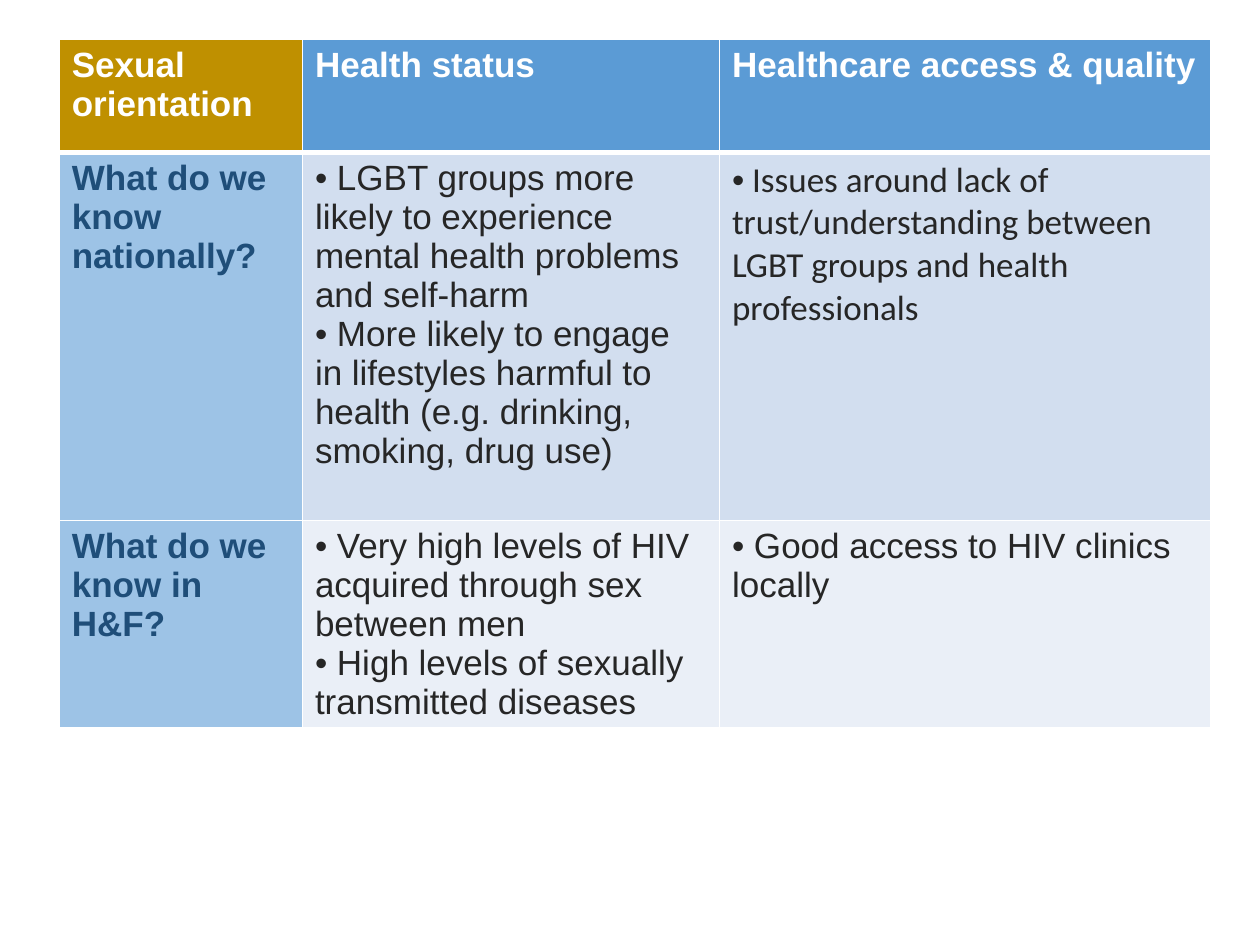
from dataclasses import dataclass

import pptx
import pptx.dml.color
import pptx.oxml.ns
import pptx.table
import pptx.util
from lxml import etree

Inches = pptx.util.Inches

COLORS = {
    "white": "FFFFFF",
    "gold": "BF9000",
    "blue": "5B9BD5",
    "light_blue": "9DC3E6",
    "navy": "1F4E79",
    "ink": "262626",
    "band_dark": "D2DEEF",
    "band_light": "EAEFF7",
}
COLUMN_WIDTHS = [1.93, 3.31, 3.9]
ROW_HEIGHTS = [0.9, 2.92, 1.64]


@dataclass
class Entry:
    lines: list[str]
    fill: str
    color: str = "ink"
    bold: bool = False
    bulleted: bool = True
    font: str = "Arial"


def heading(text: str, fill: str, color: str = "white") -> Entry:
    return Entry([text], fill, color, bold=True, bulleted=False)


ROWS = [
    [
        heading("Sexual orientation", "gold"),
        heading("Health status", "blue"),
        heading("Healthcare access & quality", "blue"),
    ],
    [
        heading("What do we know nationally?", "light_blue", "navy"),
        Entry([
            "LGBT groups more likely to experience mental health problems and self-harm",
            "More likely to engage in lifestyles harmful to health "
            "(e.g. drinking, smoking, drug use)",
        ], "band_dark"),
        Entry([
            "Issues around lack of trust/understanding between LGBT groups "
            "and health professionals",
        ], "band_dark", font="Calibri"),
    ],
    [
        heading("What do we know in H&F?", "light_blue", "navy"),
        Entry([
            "Very high levels of HIV acquired through sex between men",
            "High levels of sexually transmitted diseases",
        ], "band_light"),
        Entry(["Good access to HIV clinics locally"], "band_light"),
    ],
]


def rgb(name: str) -> pptx.dml.color.RGBColor:
    return pptx.dml.color.RGBColor.from_string(COLORS[name])


def add_child(parent: etree._Element, tag: str, **attributes: str) -> etree._Element:
    return etree.SubElement(parent, pptx.oxml.ns.qn(tag), **attributes)


def set_borders(cell: pptx.table._Cell, top: float, bottom: float) -> None:
    """Draw white borders; top and bottom widths are in points."""
    properties = cell._tc.get_or_add_tcPr()
    for side, width in (("L", 1), ("R", 1), ("T", top), ("B", bottom)):
        line = add_child(properties, f"a:ln{side}", w=str(pptx.util.Pt(width)))
        add_child(add_child(line, "a:solidFill"), "a:srgbClr", val=COLORS["white"])


def fill_cell(cell: pptx.table._Cell, entry: Entry) -> None:
    cell.fill.solid()
    cell.fill.fore_color.rgb = rgb(entry.fill)
    frame = cell.text_frame
    for index, line in enumerate(entry.lines):
        para = frame.add_paragraph() if index else frame.paragraphs[0]
        if entry.bulleted:
            properties = para._p.get_or_add_pPr()
            add_child(properties, "a:buFont", typeface="Arial")
            add_child(properties, "a:buChar", char="•")
        span = para.add_run()
        # With no hanging indent, the space parts the text from its bullet.
        span.text = f" {line}" if entry.bulleted else line
        span.font.name = entry.font
        span.font.size = pptx.util.Pt(20)
        span.font.bold = entry.bold
        span.font.color.rgb = rgb(entry.color)


def main() -> None:
    deck = pptx.Presentation()
    deck.slide_width, deck.slide_height = Inches(10), Inches(7.5)
    page = deck.slides.add_slide(deck.slide_layouts[6])
    table = page.shapes.add_table(
        len(ROWS), len(COLUMN_WIDTHS), Inches(0.47), Inches(0.31),
        Inches(sum(COLUMN_WIDTHS)), Inches(sum(ROW_HEIGHTS)),
    ).table
    for column, width in zip(table.columns, COLUMN_WIDTHS):
        column.width = Inches(width)
    for row, height in zip(table.rows, ROW_HEIGHTS):
        row.height = Inches(height)
    for row_index, entries in enumerate(ROWS):
        for column_index, entry in enumerate(entries):
            cell = table.cell(row_index, column_index)
            set_borders(cell, top=3 if row_index == 1 else 1,
                        bottom=3 if row_index == 0 else 1)
            fill_cell(cell, entry)
    deck.save("out.pptx")


if __name__ == "__main__":
    main()
